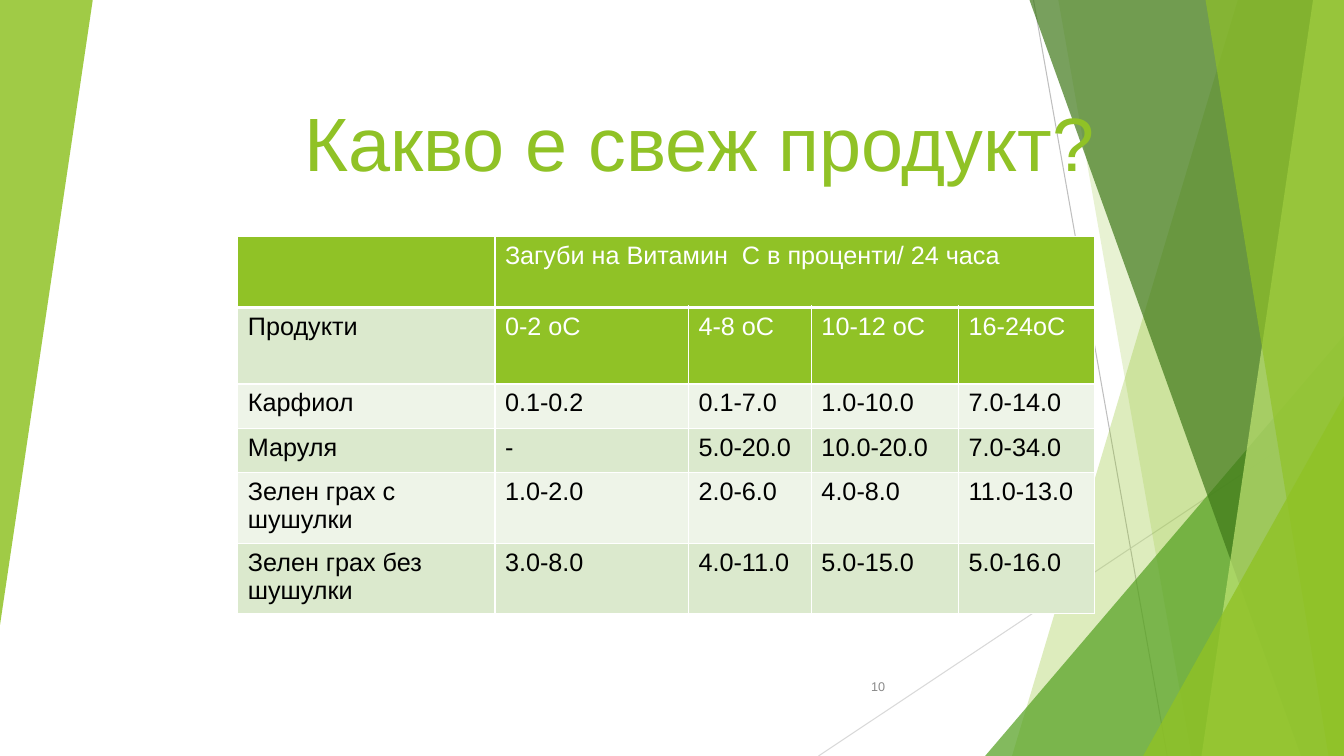
from dataclasses import dataclass

from lxml import etree
from pptx import Presentation
from pptx.dml.color import RGBColor
from pptx.enum.shapes import MSO_CONNECTOR, MSO_SHAPE
from pptx.enum.text import MSO_ANCHOR, PP_ALIGN
from pptx.oxml.ns import qn
from pptx.util import Inches, Pt

STRAIGHT = MSO_CONNECTOR.STRAIGHT
TRIANGLE = MSO_SHAPE.ISOSCELES_TRIANGLE
RIGHT = PP_ALIGN.RIGHT
BOTTOM, MIDDLE = MSO_ANCHOR.BOTTOM, MSO_ANCHOR.MIDDLE


@dataclass(frozen=True)
class Theme:
    font: str = "Arial"
    lime: str = "90C226"
    pale_lime: str = "C0E474"
    green: str = "54A021"
    forest: str = "3F7819"
    band_dark: str = "DBE9CD"
    band_light: str = "EEF4E8"
    white: str = "FFFFFF"
    black: str = "000000"
    number: str = "898989"
    line_dark: str = "BFBFBF"
    line_light: str = "D9D9D9"
    title_size: int = 54
    table_size: int = 18
    number_size: int = 9


theme = Theme()
prs = Presentation()
prs.slide_width, prs.slide_height = Inches(13.333), Inches(7.5)
s = prs.slides.add_slide(prs.slide_layouts[6])

# The slide is a grid of 100 columns by 100 rows
COL, ROW = prs.slide_width / 100, prs.slide_height / 100


def grid(*lengths):
    """Turn alternating column and row counts into slide lengths."""
    return [round(n * (ROW if i % 2 else COL)) for i, n in enumerate(lengths)]


def add_run(p, text, size, color):
    r = p.add_run()
    r.text = text
    r.font.name, r.font.size = theme.font, Pt(size)
    r.font.color.rgb = RGBColor.from_string(color)


# Thin crossing lines
for ends, color in [
    ((76.9, 0, 86.85, 100), theme.line_dark),
    ((100, 53.73, 60.9, 100), theme.line_light),
]:
    line = s.shapes.add_connector(STRAIGHT, *grid(*ends))
    line.line.color.rgb = RGBColor.from_string(color)
    line.line.width = Pt(0.75)
    etree.SubElement(line._element.spPr, qn("a:effectLst"))

# Facets: a "slab" runs from its top x and bottom x to the right edge,
# a "corner" is a triangle box with its apex at the right
facets = [
    ("slab", (92.1, 75.3), theme.lime, 30),
    ("slab", (78.75, 88.65), theme.lime, 20),
    ("corner", (73.3, 44.4, 26.7, 55.6), theme.green, 72),
    ("slab", (76.6, 96.8), theme.forest, 70),
    ("slab", (97.7, 89.4), theme.pale_lime, 70),
    ("slab", (89.7, 98.85), theme.lime, 65),
    ("corner", (85.05, 52.4, 14.95, 47.6), theme.lime, 80),
    ("left corner", (0, 0, 6.9, 82.67), theme.lime, 85),
]
for kind, place, color, opacity in facets:
    if kind == "slab":
        top_x, bottom_x = place
        outline = s.shapes.build_freeform(*grid(top_x, 0))
        outline.add_line_segments(
            [grid(100, 0), grid(100, 100), grid(bottom_x, 100)], close=True)
        sp = outline.convert_to_shape()
    else:
        sp = s.shapes.add_shape(TRIANGLE, *grid(*place))
        sp.adjustments[0] = 1
        sp.rotation = 180 if kind == "left corner" else 0
    sp.shadow.inherit = False
    sp.line.fill.background()
    sp.fill.solid()
    sp.fill.fore_color.rgb = RGBColor.from_string(color)
    rgb = sp._element.spPr.find(".//" + qn("a:srgbClr"))
    etree.SubElement(rgb, qn("a:alpha"), val=str(opacity * 1000))

# Title and slide number
for place, text, size, color, anchor in [
    ((18.45, 3.87, 63.75, 21.47), "Какво е свеж продукт?",
     theme.title_size, theme.lime, BOTTOM),
    ((59.1, 88.13, 7.5, 5.33), "10", theme.number_size, theme.number, MIDDLE),
]:
    tf = s.shapes.add_textbox(*grid(*place)).text_frame
    tf.word_wrap = True
    tf.vertical_anchor = anchor
    p = tf.paragraphs[0]
    p.alignment = RIGHT
    add_run(p, text, size, color)

# Vitamin C losses
losses = [
    ["", "Загуби на Витамин  C в проценти/ 24 часа", "", "", ""],
    ["Продукти", "0-2 oC", "4-8 oC", "10-12 oC", "16-24oC"],
    ["Карфиол", "0.1-0.2", "0.1-7.0", "1.0-10.0", "7.0-14.0"],
    ["Маруля", "-", "5.0-20.0", "10.0-20.0", "7.0-34.0"],
    ["Зелен грах с шушулки", "1.0-2.0", "2.0-6.0", "4.0-8.0", "11.0-13.0"],
    ["Зелен грах без шушулки", "3.0-8.0", "4.0-11.0", "5.0-15.0", "5.0-16.0"],
]
col_widths = [19.13, 14.4, 9.15, 10.95, 10.13]
row_heights = [9.33, 10.13, 5.87, 5.87, 9.33, 9.33]
table = s.shapes.add_table(
    len(row_heights), len(col_widths),
    *grid(17.7, 31.33, sum(col_widths), sum(row_heights))).table
for column, width in zip(table.columns, col_widths):
    column.width = round(width * COL)
for row, height in zip(table.rows, row_heights):
    row.height = round(height * ROW)
table.cell(0, 1).merge(table.cell(0, 4))

for i, texts in enumerate(losses):
    for j, text in enumerate(texts):
        cell = table.cell(i, j)
        is_header = i == 0 or (i == 1 and j > 0)
        band = theme.band_dark if i % 2 else theme.band_light
        tcPr = cell._tc.get_or_add_tcPr()
        for side in "LRTB":
            width = 3 if i == 0 and side == "B" else 1
            ln = etree.SubElement(tcPr, qn("a:ln" + side), w=str(Pt(width)))
            fill = etree.SubElement(ln, qn("a:solidFill"))
            etree.SubElement(fill, qn("a:srgbClr"), val=theme.white)
        cell.fill.solid()
        cell.fill.fore_color.rgb = RGBColor.from_string(
            theme.lime if is_header else band)
        if text:
            add_run(cell.text_frame.paragraphs[0], text, theme.table_size,
                    theme.white if is_header else theme.black)

prs.save("out.pptx")
